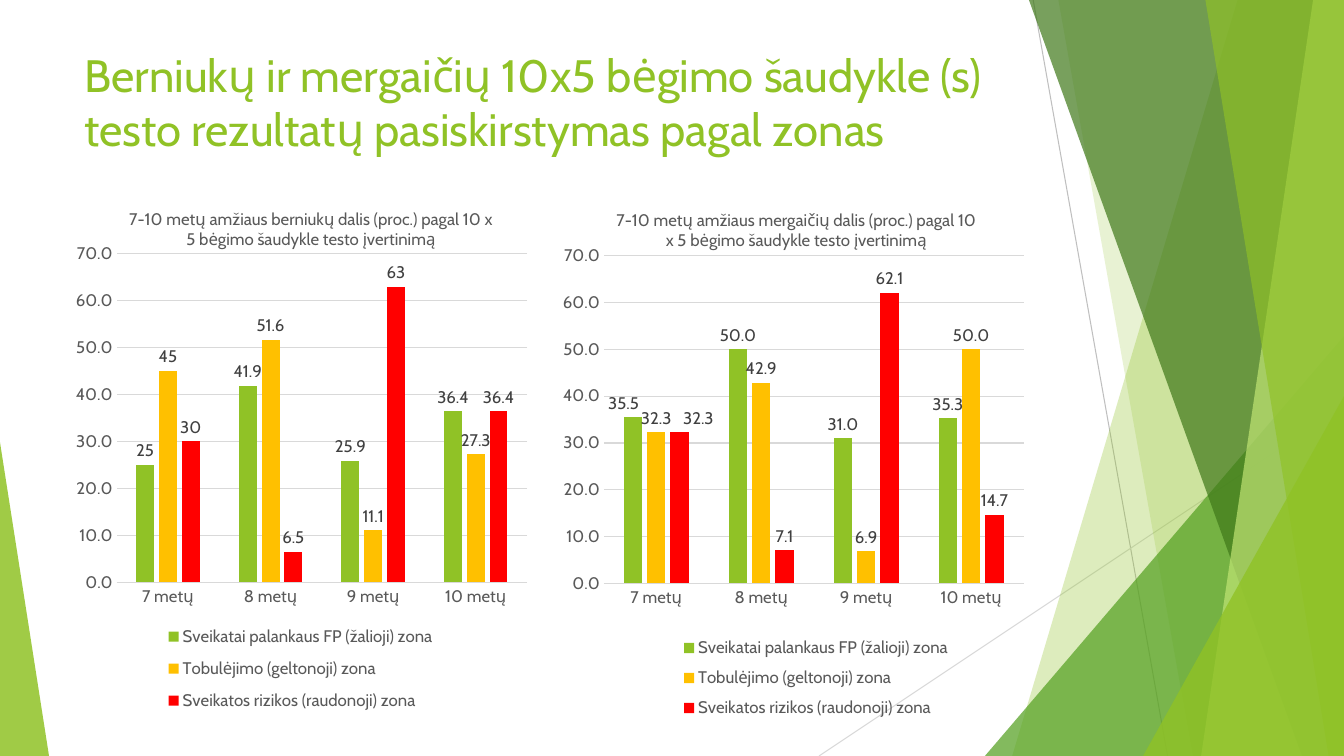
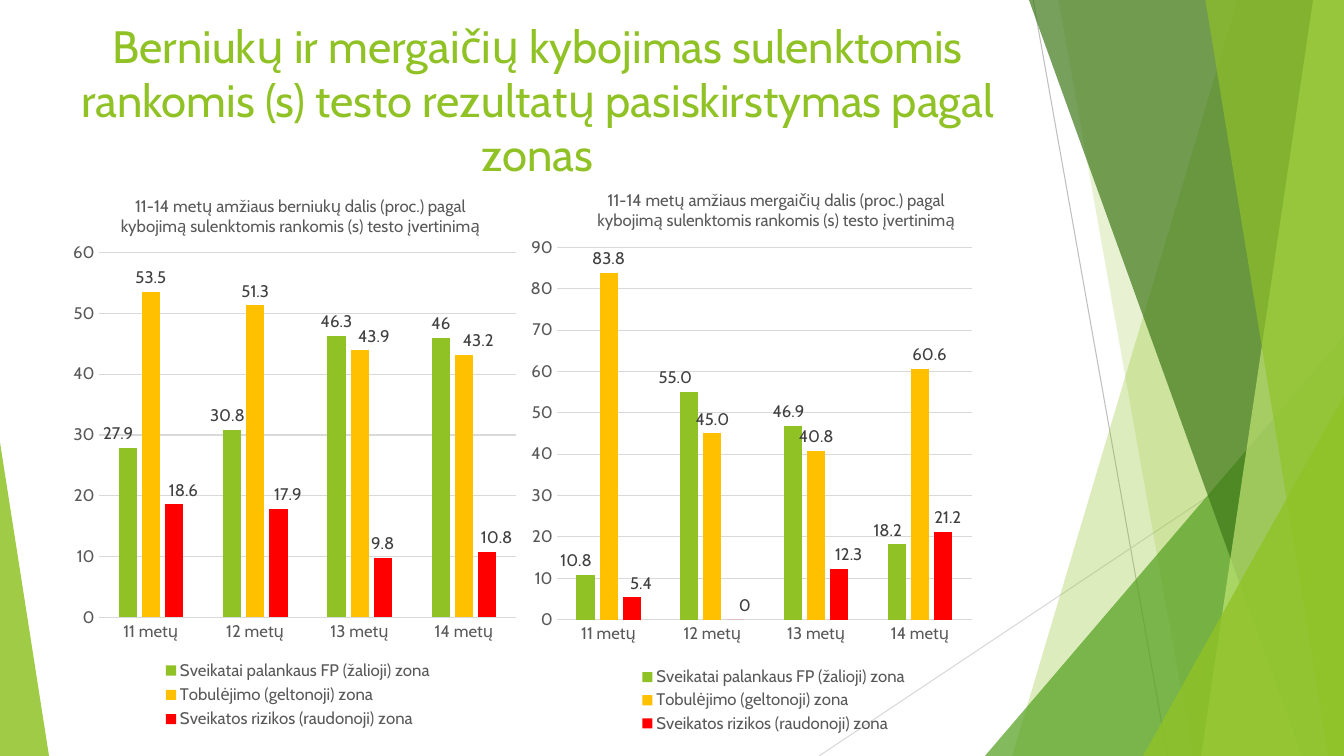
from dataclasses import dataclass, field

from lxml.etree import SubElement
from pptx import Presentation
from pptx.chart.data import CategoryChartData
from pptx.dml.color import RGBColor
from pptx.enum.chart import XL_CHART_TYPE, XL_LABEL_POSITION, XL_LEGEND_POSITION, XL_TICK_MARK
from pptx.enum.shapes import MSO_CONNECTOR, MSO_SHAPE
from pptx.enum.text import MSO_ANCHOR, MSO_AUTO_SIZE, PP_ALIGN
from pptx.oxml.ns import qn
from pptx.util import Pt


@dataclass(frozen=True)
class Theme:
    width: int = 960
    height: int = 540
    font: str = "Cabin"
    title_size: float = 32.4
    chart_size: int = 12
    hairline: float = 0.75
    lime: str = "90C226"
    pale_lime: str = "C0E474"
    green: str = "54A021"
    forest: str = "3F7819"
    amber: str = "FFC000"
    red: str = "FF0000"
    text: str = "595959"
    label: str = "404040"
    grid: str = "D9D9D9"
    ray: str = "BFBFBF"


THEME = Theme()
ZONES = [
    ("Sveikatai palankaus FP (žalioji) zona", THEME.lime),
    ("Tobulėjimo (geltonoji) zona", THEME.amber),
    ("Sveikatos rizikos (raudonoji) zona", THEME.red),
]


@dataclass
class ZoneChart:
    heading: str
    ages: range
    values: list
    box: tuple
    heading_at: tuple
    plot: tuple
    legend: tuple
    top: int
    axis_format: str = "General"
    label_formats: tuple = ("General",) * 3
    nudges: dict = field(default_factory=dict)


def color(code):
    return RGBColor.from_string(code)


def style_font(font, size, code):
    font.name = THEME.font
    font.size = Pt(size)
    font.bold = False
    font.color.rgb = color(code)


def style_line(line, code):
    line.color.rgb = color(code)
    line.width = Pt(THEME.hairline)


def paint(shape, code, opacity):
    shape.shadow.inherit = False
    shape.line.fill.background()
    shape.fill.solid()
    shape.fill.fore_color.rgb = color(code)
    tint = shape.element.spPr.find(f"{qn('a:solidFill')}/{qn('a:srgbClr')}")
    SubElement(tint, qn("a:alpha"), val=str(opacity * 1000))
    return shape


def add_ray(slide, start, end, code):
    ray = slide.shapes.add_connector(MSO_CONNECTOR.STRAIGHT, *map(Pt, start + end))
    style_line(ray.line, code)
    SubElement(ray.element.spPr, qn("a:effectLst"))
    return ray


def add_band(slide, top_left, bottom_left, code, opacity):
    right, bottom = Pt(THEME.width), Pt(THEME.height)
    outline = slide.shapes.build_freeform(Pt(top_left), 0)
    outline.add_line_segments([(right, 0), (right, bottom), (Pt(bottom_left), bottom)], close=True)
    return paint(outline.convert_to_shape(), code, opacity)


def add_wedge(slide, left, width, height, apex, code, opacity):
    wedge = slide.shapes.add_shape(
        MSO_SHAPE.ISOSCELES_TRIANGLE, Pt(left), Pt(THEME.height - height), Pt(width), Pt(height))
    wedge.adjustments[0] = apex
    return paint(wedge, code, opacity)


def move_facets_to_layout(slide):
    layout = slide.slide_layout
    for placeholder in list(layout.placeholders):
        if placeholder.placeholder_format.idx != 0:
            placeholder.element.getparent().remove(placeholder.element)
    facets = [
        add_ray(slide, (738, 0), (834, 540), THEME.ray),
        add_ray(slide, (960, 290), (585, 540), THEME.grid),
        add_band(slide, 884, 723, THEME.lime, 30),
        add_band(slide, 756, 852, THEME.lime, 20),
        add_wedge(slide, 703.5, 256.5, 300, 1, THEME.green, 72),
        add_band(slide, 735, 930, THEME.forest, 70),
        add_band(slide, 938, 858, THEME.pale_lime, 70),
        add_band(slide, 861, 949, THEME.lime, 65),
        add_wedge(slide, 816.5, 143.5, 257, 1, THEME.lime, 80),
        add_wedge(slide, 0, 35, 224, 0, THEME.lime, 85),
    ]
    for facet in facets:
        layout.shapes.element.append(facet.element)


def set_title(slide, words, box, align):
    title = slide.shapes.title
    title.left, title.top, title.width, title.height = map(Pt, box)
    frame = title.text_frame
    frame.text = words
    frame.word_wrap = True
    frame.auto_size = MSO_AUTO_SIZE.NONE
    frame.vertical_anchor = MSO_ANCHOR.TOP
    paragraph = frame.paragraphs[0]
    paragraph.alignment = align
    style_font(paragraph.font, THEME.title_size, THEME.lime)


def set_layout(host, index, settings):
    for old in host.findall(qn("c:layout")):
        host.remove(old)
    layout = SubElement(host, qn("c:layout"))
    manual = SubElement(layout, qn("c:manualLayout"))
    for name, value in settings.items():
        SubElement(manual, qn(f"c:{name}"), val=str(value))
    host.insert(index, layout)


def edge_layout(x, y):
    return {"xMode": "edge", "yMode": "edge", "x": x, "y": y}


def style_axes(chart, spec):
    ages, percent = chart.category_axis, chart.value_axis
    for axis in (ages, percent):
        axis.major_tick_mark = axis.minor_tick_mark = XL_TICK_MARK.NONE
        style_font(axis.tick_labels.font, THEME.chart_size, THEME.text)
    style_line(ages.format.line, THEME.grid)
    percent.format.line.fill.background()
    percent.has_major_gridlines = True
    style_line(percent.major_gridlines.format.line, THEME.grid)
    percent.minimum_scale, percent.maximum_scale, percent.major_unit = 0, spec.top, 10
    percent.tick_labels.number_format = spec.axis_format
    percent.tick_labels.number_format_is_linked = False


def style_series(series, code, label_format):
    series.format.fill.solid()
    series.format.fill.fore_color.rgb = color(code)
    series.invert_if_negative = False
    labels = series.data_labels
    labels.show_value = True
    labels.position = XL_LABEL_POSITION.OUTSIDE_END
    labels.number_format = label_format
    labels.number_format_is_linked = False
    style_font(labels.font, THEME.chart_size, THEME.label)


def nudge_label(chart, zone, age, shift, label_format):
    label = chart.plots[0].series[zone].points[age].data_label
    label.position = XL_LABEL_POSITION.OUTSIDE_END
    style_font(label.font, THEME.chart_size, THEME.label)
    host = chart.element.xpath(f"//c:ser[{zone + 1}]//c:dLbl[c:idx/@val='{age}']")[0]
    set_layout(host, 1, {"x": shift, "y": 0})
    number = SubElement(host, qn("c:numFmt"), formatCode=label_format, sourceLinked="0")
    host.insert(2, number)


def set_heading(chart, spec):
    chart.has_title = True
    heading = chart.chart_title
    heading.include_in_layout = False
    heading.text_frame.text = spec.heading
    style_font(heading.text_frame.paragraphs[0].font, THEME.chart_size, THEME.text)
    set_layout(heading.element, 1, edge_layout(*spec.heading_at))


def set_legend(chart, spec):
    chart.has_legend = True
    chart.legend.position = XL_LEGEND_POSITION.RIGHT
    chart.legend.include_in_layout = False
    style_font(chart.legend.font, THEME.chart_size, THEME.text)
    x, y, height = spec.legend
    host = chart.element.xpath("c:chart/c:legend")[0]
    set_layout(host, 1, {**edge_layout(x, y), "w": 0.6, "h": height})


def add_zone_chart(slide, spec):
    data = CategoryChartData()
    data.categories = [f"{age} metų" for age in spec.ages]
    for (name, _), values in zip(ZONES, spec.values):
        data.add_series(name, values)
    chart = slide.shapes.add_chart(
        XL_CHART_TYPE.COLUMN_CLUSTERED, *map(Pt, spec.box), data).chart
    style_font(chart.font, THEME.chart_size, THEME.text)
    set_heading(chart, spec)
    set_legend(chart, spec)
    style_axes(chart, spec)
    bars = chart.plots[0]
    bars.gap_width, bars.overlap, bars.vary_by_categories = 219, -27, False
    for series, (_, code), label_format in zip(bars.series, ZONES, spec.label_formats):
        style_series(series, code, label_format)
    for (zone, age), shift in spec.nudges.items():
        nudge_label(chart, zone, age, shift, spec.label_formats[zone])
    x, y, width, height = spec.plot
    host = chart.element.xpath("c:chart/c:plotArea")[0]
    set_layout(host, 0, {"layoutTarget": "inner", **edge_layout(x, y), "w": width, "h": height})


SHUTTLE_RUN = [
    ZoneChart(
        heading="7-10 metų amžiaus berniukų dalis (proc.) pagal 10 x 5 bėgimo šaudykle testo įvertinimą",
        ages=range(7, 11),
        values=[(25, 41.9, 25.9, 36.4), (45, 51.6, 11.1, 27.3), (30, 6.5, 63, 36.4)],
        box=(53, 135, 337, 385), heading_at=(0.11, 0.03), plot=(0.09, 0.12, 0.87, 0.61),
        legend=(0.18, 0.79, 0.2), top=70, axis_format="0.0"),
    ZoneChart(
        heading="7-10 metų amžiaus mergaičių dalis (proc.) pagal 10 x 5 bėgimo šaudykle testo įvertinimą",
        ages=range(7, 11),
        values=[(35.5, 50, 31, 35.3), (32.3, 42.9, 6.9, 50), (32.3, 7.1, 62.1, 14.7)],
        box=(401, 135, 337, 397), heading_at=(0.11, 0.03), plot=(0.09, 0.12, 0.89, 0.59),
        legend=(0.24, 0.79, 0.18), top=70, axis_format="0.0", label_formats=("0.0",) * 3,
        nudges={(0, 0): -0.02, (2, 0): 0.04}),
]
BENT_ARM_HANG = [
    ZoneChart(
        heading="11-14 metų amžiaus berniukų dalis (proc.) pagal kybojimą sulenktomis rankomis (s) testo įvertinimą",
        ages=range(11, 15),
        values=[(27.9, 30.8, 46.3, 46), (53.5, 51.3, 43.9, 43.2), (18.6, 17.9, 9.8, 10.8)],
        box=(40, 133, 339, 395), heading_at=(0.13, 0.01), plot=(0.09, 0.12, 0.88, 0.66),
        legend=(0.21, 0.85, 0.14), top=60,
        nudges={(0, 0): -0.02, (0, 1): -0.01, (1, 2): 0.03, (1, 3): 0.03,
                (2, 0): 0.02, (2, 1): 0.02, (2, 3): 0.02}),
    ZoneChart(
        heading="11-14 metų amžiaus mergaičių dalis (proc.) pagal kybojimą sulenktomis rankomis (s) testo įvertinimą",
        ages=range(11, 15),
        values=[(10.8, 55, 46.9, 18.2), (83.8, 45, 40.8, 60.6), (5.4, 0, 12.3, 21.2)],
        box=(379, 133, 339, 397), heading_at=(0.13, 0), plot=(0.05, 0.11, 0.88, 0.67),
        legend=(0.21, 0.86, 0.13), top=90, label_formats=("0.0", "0.0", "General"),
        nudges={(0, 0): -0.02, (0, 1): -0.03, (0, 2): -0.01, (0, 3): -0.02, (1, 3): 0.02,
                (2, 0): 0.02, (2, 1): 0.02, (2, 2): 0.02, (2, 3): 0.01}),
]
RESULTS = [
    ("Berniukų ir mergaičių 10x5 bėgimo šaudykle (s) testo rezultatų pasiskirstymas pagal zonas",
     (53, 30, 693, 89), PP_ALIGN.LEFT, SHUTTLE_RUN),
    ("Berniukų ir mergaičių kybojimas sulenktomis rankomis (s) testo rezultatų pasiskirstymas pagal zonas",
     (32, 9, 704, 82), PP_ALIGN.CENTER, BENT_ARM_HANG),
]


def main():
    deck = Presentation()
    deck.slide_width, deck.slide_height = Pt(THEME.width), Pt(THEME.height)
    title_only = deck.slide_layouts[5]
    for number, (words, box, align, charts) in enumerate(RESULTS):
        slide = deck.slides.add_slide(title_only)
        if number == 0:
            move_facets_to_layout(slide)
        set_title(slide, words, box, align)
        for spec in charts:
            add_zone_chart(slide, spec)
    deck.save("out.pptx")


if __name__ == "__main__":
    main()
